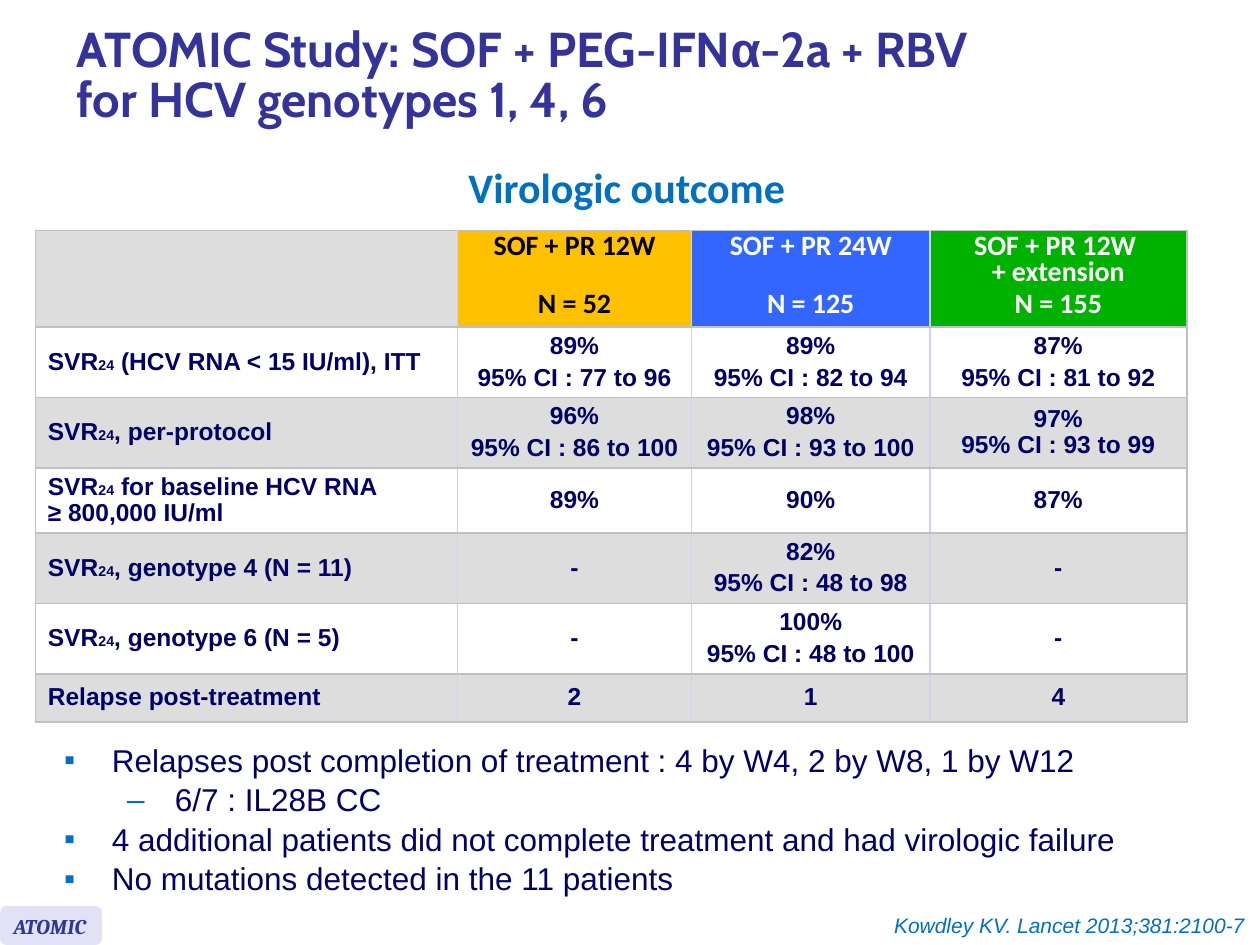
from dataclasses import dataclass

import pptx
import pptx.dml.color
import pptx.enum.shapes
import pptx.enum.text
import pptx.oxml
import pptx.oxml.ns
import pptx.util

Inches = pptx.util.Inches
Pt = pptx.util.Pt
RGBColor = pptx.dml.color.RGBColor
ALIGN = pptx.enum.text.PP_ALIGN
ANCHOR = pptx.enum.text.MSO_ANCHOR

INDIGO = RGBColor(0x33, 0x33, 0x99)
AZURE = RGBColor(0x00, 0x70, 0xC0)
NAVY = RGBColor(0x00, 0x00, 0x66)
BLACK = RGBColor(0x00, 0x00, 0x00)
WHITE = RGBColor(0xFF, 0xFF, 0xFF)
GREY = RGBColor(0xDD, 0xDD, 0xDD)
AMBER = RGBColor(0xFF, 0xC0, 0x00)
BLUE = RGBColor(0x33, 0x66, 0xFF)
GREEN = RGBColor(0x00, 0xB2, 0x00)
LAVENDER = RGBColor(0xE2, 0xE2, 0xF6)
OUTER_LINE = RGBColor(0xC0, 0xC0, 0xC0)
INNER_LINE = RGBColor(0xD0, 0xD0, 0xF0)

TITLE = {"size": Pt(28), "name": "Cabin", "bold": True}
TITLE_ALPHA = TITLE | {"name": "Arial"}
SUBTITLE = {"size": Pt(24), "name": "Calibri", "bold": True}
HEADER = {"size": Pt(16), "name": "Calibri", "bold": True}
BODY = {"size": Pt(14), "name": "Arial", "bold": True}
BULLET = {"size": Pt(18), "name": "Arial"}
BADGE = {"size": Pt(12), "name": "Cambria", "bold": True, "italic": True}
CITATION = {"size": Pt(12), "name": "Arial", "italic": True}


@dataclass
class Arm:
    name: str
    size: str
    fill: RGBColor
    color: RGBColor


@dataclass
class Outcome:
    label: str
    values: tuple[str, ...]
    height: float


@dataclass
class Bullet:
    text: str
    level: int = 0


ARMS = [
    Arm("SOF + PR 12W\n", "N = 52", AMBER, BLACK),
    Arm("SOF + PR 24W\n", "N = 125", BLUE, WHITE),
    Arm("SOF + PR 12W \n+ extension", "N = 155", GREEN, WHITE),
]
OUTCOMES = [
    Outcome("SVR_24_ (HCV RNA < 15 IU/ml), ITT",
            ("89%|95% CI : 77 to 96", "89%|95% CI : 82 to 94", "87%|95% CI : 81 to 92"), 0.49),
    Outcome("SVR_24_, per-protocol",
            ("96%|95% CI : 86 to 100", "98%|95% CI : 93 to 100", "97%\n95% CI : 93 to 99"), 0.49),
    Outcome("SVR_24_ for baseline HCV RNA\n≥ 800,000 IU/ml", ("89%", "90%", "87%"), 0.45),
    Outcome("SVR_24_, genotype 4 (N = 11)", ("-", "82%|95% CI : 48 to 98", "-"), 0.49),
    Outcome("SVR_24_, genotype 6 (N = 5)", ("-", "100%|95% CI : 48 to 100", "-"), 0.49),
    Outcome("Relapse post-treatment", ("2", "1", "4"), 0.38),
]
BULLETS = [
    Bullet("Relapses post completion of treatment : 4 by W4, 2 by W8, 1 by W12"),
    Bullet("6/7 : IL28B CC", 1),
    Bullet("4 additional patients did not complete treatment and had virologic failure"),
    Bullet("No mutations detected in the 11 patients"),
]
COLUMNS = [3.35, 1.86, 1.89, 2.04]
HEADER_HEIGHT = 0.69


def add_run(p, text: str, fmt: dict, color: RGBColor, baseline: int = 0) -> None:
    for i, line in enumerate(text.split("\n")):
        if i:
            p.add_line_break()
        if line:
            r = p.add_run()
            r.text = line
            for key, value in fmt.items():
                setattr(r.font, key, value)
            r.font.color.rgb = color
            if baseline:
                r.font._element.set("baseline", str(baseline))


def add_text(slide, box: tuple, text: str, fmt: dict, color: RGBColor, align=ALIGN.LEFT):
    tf = slide.shapes.add_textbox(*map(Inches, box)).text_frame
    tf.word_wrap = True
    p = tf.paragraphs[0]
    p.alignment = align
    add_run(p, text, fmt, color)
    return tf


def add_title(slide) -> None:
    tf = add_text(slide, (0.51, 0.08, 9.13, 1.07), "ATOMIC Study: SOF + PEG-IFN", TITLE, INDIGO)
    tf.vertical_anchor = ANCHOR.MIDDLE
    p = tf.paragraphs[0]
    p.line_spacing = 0.85
    add_run(p, "α", TITLE_ALPHA, INDIGO)
    add_run(p, "-2a + RBV \nfor HCV genotypes 1, 4, 6", TITLE, INDIGO)


def set_borders(cell, col: int) -> None:
    last = len(COLUMNS) - 1
    edges = {
        "lnL": INNER_LINE if col else OUTER_LINE,
        "lnR": INNER_LINE if col < last else OUTER_LINE,
        "lnT": OUTER_LINE,
        "lnB": OUTER_LINE,
    }
    for tag, color in edges.items():
        cell._tc.get_or_add_tcPr().append(pptx.oxml.parse_xml(
            f'<a:{tag} {pptx.oxml.ns.nsdecls("a")} w="{Pt(1)}"><a:solidFill>'
            f'<a:srgbClr val="{color}"/></a:solidFill></a:{tag}>'))


def fill_cell(cell, col: int, paragraphs: list[str], fill: RGBColor, fmt: dict, color: RGBColor) -> None:
    set_borders(cell, col)
    cell.fill.solid()
    cell.fill.fore_color.rgb = fill
    cell.vertical_anchor = ANCHOR.MIDDLE
    tf = cell.text_frame
    for i, text in enumerate(paragraphs):
        p = tf.add_paragraph() if i else tf.paragraphs[0]
        p.alignment = ALIGN.CENTER if col else ALIGN.LEFT
        p.line_spacing = Pt(15)
        if i:
            p.space_before = Pt(3)
        for j, part in enumerate(text.split("_")):
            add_run(p, part, fmt, color, -25 if j % 2 else 0)


def add_outcome_table(slide) -> None:
    heights = [HEADER_HEIGHT] + [o.height for o in OUTCOMES]
    table = slide.shapes.add_table(
        len(heights), len(COLUMNS), Inches(0.28), Inches(1.83),
        Inches(sum(COLUMNS)), Inches(sum(heights))).table
    table.first_row = table.horz_banding = False
    for column, width in zip(table.columns, COLUMNS):
        column.width = Inches(width)
    for row, height in zip(table.rows, heights):
        row.height = Inches(height)
    fill_cell(table.cell(0, 0), 0, [], GREY, HEADER, BLACK)
    for col, arm in enumerate(ARMS, 1):
        fill_cell(table.cell(0, col), col, [arm.name, arm.size], arm.fill, HEADER, arm.color)
    for row, outcome in enumerate(OUTCOMES, 1):
        fill = WHITE if row % 2 else GREY
        for col, text in enumerate((outcome.label, *outcome.values)):
            fill_cell(table.cell(row, col), col, text.split("|"), fill, BODY, NAVY)


def add_bullets(slide) -> None:
    tf = slide.shapes.add_textbox(Inches(0.41), Inches(5.83), Inches(9.48), Inches(1.01)).text_frame
    tf.word_wrap = True
    for i, bullet in enumerate(BULLETS):
        p = tf.add_paragraph() if i else tf.paragraphs[0]
        p.level = bullet.level
        pPr = p._p.get_or_add_pPr()
        pPr.set("marL", str(Inches(0.38 + 0.5 * bullet.level)))
        pPr.set("indent", str(Inches(-0.38)))
        for xml in (f'<a:buClr %s><a:srgbClr val="{AZURE}"/></a:buClr>',
                    '<a:buFont %s typeface="Arial"/>',
                    f'<a:buChar %s char="{"▪–"[bullet.level]}"/>'):
            pPr.append(pptx.oxml.parse_xml(xml % pptx.oxml.ns.nsdecls("a")))
        if i:
            p.space_before = Pt(1)
        add_run(p, bullet.text, BULLET, NAVY)


def add_badge(slide) -> None:
    sp = slide.shapes.add_shape(
        pptx.enum.shapes.MSO_SHAPE.ROUNDED_RECTANGLE,
        Inches(0), Inches(7.19), Inches(0.81), Inches(0.31))
    sp.shadow.inherit = False
    sp.fill.solid()
    sp.fill.fore_color.rgb = LAVENDER
    sp.line.fill.background()
    add_text(slide, (0.01, 7.2, 0.88, 0.3), "ATOMIC", BADGE, INDIGO)


def main() -> None:
    prs = pptx.Presentation()
    prs.slide_width, prs.slide_height = Inches(10), Inches(7.5)
    s = prs.slides.add_slide(prs.slide_layouts[6])
    add_title(s)
    add_outcome_table(s)
    tf = add_text(s, (1.06, 1.42, 7.83, 0.35), "Virologic outcome", SUBTITLE, AZURE, ALIGN.CENTER)
    tf.paragraphs[0].line_spacing = Pt(15.2)
    add_bullets(s)
    add_badge(s)
    add_text(s, (6.68, 7.19, 3.3, 0.3), "Kowdley KV. Lancet 2013;381:2100-7",
             CITATION, AZURE, ALIGN.RIGHT)
    prs.save("out.pptx")


if __name__ == "__main__":
    main()
